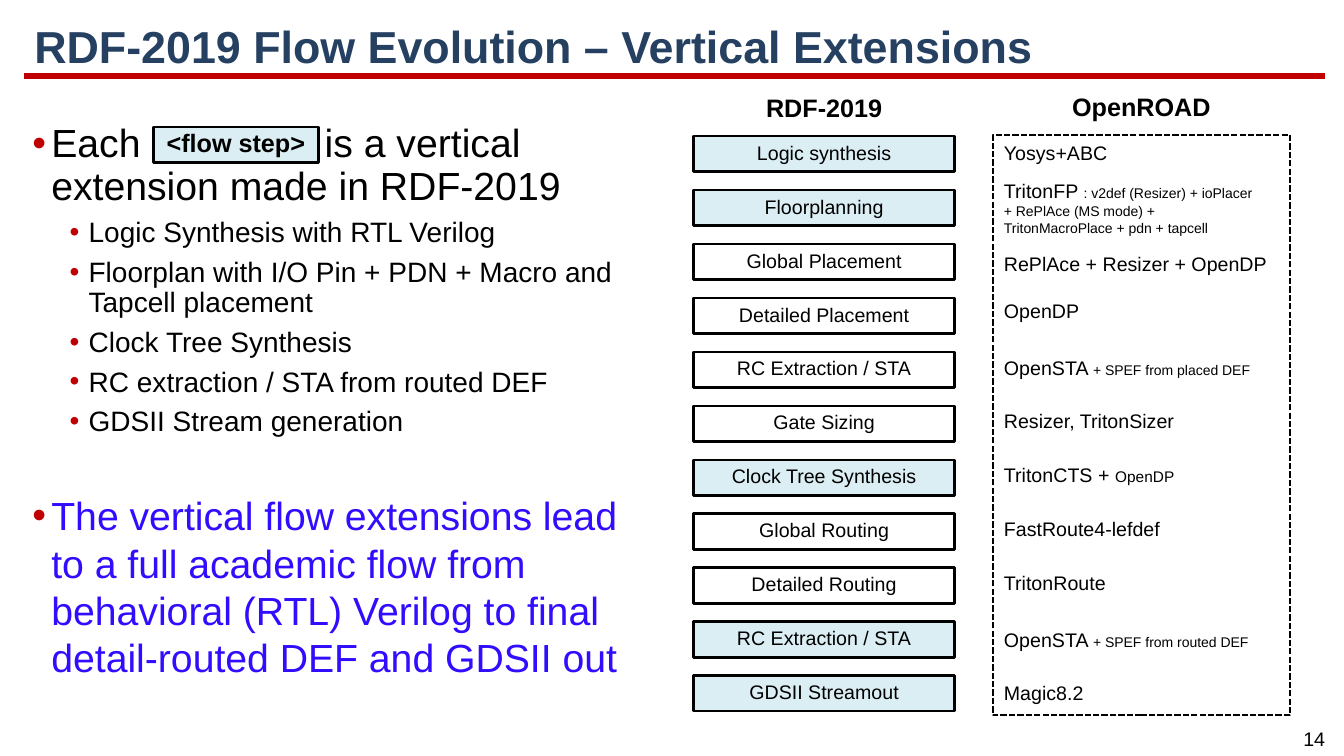
from lxml import etree
from pptx import Presentation
from pptx.dml.color import RGBColor
from pptx.enum.dml import MSO_LINE
from pptx.enum.shapes import MSO_CONNECTOR, MSO_SHAPE
from pptx.enum.text import MSO_ANCHOR, MSO_AUTO_SIZE, PP_ALIGN
from pptx.oxml.ns import qn
from pptx.util import Cm, Pt

RECTANGLE = MSO_SHAPE.RECTANGLE
STRAIGHT = MSO_CONNECTOR.STRAIGHT
DASHED = MSO_LINE.SQUARE_DOT
MIDDLE, TOP = MSO_ANCHOR.MIDDLE, MSO_ANCHOR.TOP
LEFT, CENTER = PP_ALIGN.LEFT, PP_ALIGN.CENTER
NO_AUTOFIT = MSO_AUTO_SIZE.NONE

BLACK, WHITE, RED = "000000", "FFFFFF", "C00000"
NAVY, VIOLET, PALE_BLUE = "254061", "300DFF", "DBEEF4"
ROW_PITCH, STEP_HEIGHT, TOOL_HEIGHT = 1.36, 0.89, 0.86

# step, added in RDF-2019, tool, tool detail, detail size, tool label shift in cm
FLOW = [
    ("Logic synthesis", True, "Yosys+ABC", "", 10, 0),
    ("Floorplanning", True, "TritonFP ",
     ": v2def (Resizer) + ioPlacer + RePlAce (MS mode) + "
     "TritonMacroPlace + pdn + tapcell", 10, -0.4),
    ("Global Placement", False, "RePlAce + Resizer + OpenDP", "", 10, 0.07),
    ("Detailed Placement", False, "OpenDP", "", 10, -0.09),
    ("RC Extraction / STA", False, "OpenSTA ", "+ SPEF from placed DEF", 10, -0.02),
    ("Gate Sizing", False, "Resizer, TritonSizer", "", 10, -0.04),
    ("Clock Tree Synthesis", True, "TritonCTS + ", "OpenDP", 11, -0.06),
    ("Global Routing", False, "FastRoute4-lefdef", "", 10, -0.04),
    ("Detailed Routing", False, "TritonRoute", "", 10, -0.04),
    ("RC Extraction / STA", True, "OpenSTA ", "+ SPEF from routed DEF", 10, 0.03),
    ("GDSII Streamout", True, "Magic8.2", "", 10, 0),
]

# text, level, size, colour, line spacing, space before in points
POINTS = [
    ("Each\tis a vertical extension made in RDF-2019", 0, 28, BLACK, 0.9, 0),
    ("Logic Synthesis with RTL Verilog", 1, 20, BLACK, 0.9, 6.8),
    ("Floorplan with I/O Pin + PDN + Macro and Tapcell placement", 1, 20, BLACK, 0.9, 6.8),
    ("Clock Tree Synthesis", 1, 20, BLACK, 0.9, 6.8),
    ("RC extraction / STA from routed DEF", 1, 20, BLACK, 0.9, 6.8),
    ("GDSII Stream generation", 1, 20, BLACK, 0.9, 6.8),
    ("The vertical flow extensions lead to a full academic flow from behavioral "
     "(RTL) Verilog to final detail-routed DEF and GDSII out", 0, 28, VIOLET, 1.0, 38.5),
]


def color(value):
    return RGBColor.from_string(value)


def apply(target, formats):
    for name, value in formats.items():
        setattr(target, name, value)


def place(shape, box):
    apply(shape, dict(zip(("left", "top", "width", "height"), map(Cm, box))))


def add_run(paragraph, text, size, ink=BLACK, bold=False):
    run = paragraph.add_run()
    run.text = text
    apply(run.font, {"name": "Arial", "size": Pt(size), "bold": bold})
    run.font.color.rgb = color(ink)


def add_label(slide, box, runs, align=LEFT, bold=False, wrap=True):
    label = slide.shapes.add_textbox(*map(Cm, box))
    apply(label.text_frame, {"word_wrap": wrap, "vertical_anchor": TOP})
    paragraph = label.text_frame.paragraphs[0]
    paragraph.alignment = align
    for text, size in runs:
        add_run(paragraph, text, size, bold=bold)


def add_frame(slide, box, fill=None, line_width=2):
    frame = slide.shapes.add_shape(RECTANGLE, *map(Cm, box))
    frame.shadow.inherit = False
    if fill:
        frame.fill.solid()
        frame.fill.fore_color.rgb = color(fill)
    else:
        frame.fill.background()
    frame.line.color.rgb = color(BLACK)
    frame.line.width = Pt(line_width)
    return frame


def add_step(slide, box, text, fill, size=14, bold=False):
    step = add_frame(slide, box, fill)
    apply(step.text_frame, {"word_wrap": True, "vertical_anchor": MIDDLE})
    paragraph = step.text_frame.paragraphs[0]
    apply(paragraph, {"alignment": CENTER, "line_spacing": 0.9})
    add_run(paragraph, text, size, bold=bold)


def add_bullet(paragraph, indent, tab=None):
    properties = paragraph._p.get_or_add_pPr()
    properties.set("marL", str(Cm(indent)))
    properties.set("indent", str(-Cm(0.48)))
    bullet_color = etree.SubElement(properties, qn("a:buClr"))
    etree.SubElement(bullet_color, qn("a:srgbClr"), val=RED)
    etree.SubElement(properties, qn("a:buFont"), typeface="Arial")
    etree.SubElement(properties, qn("a:buChar"), char="•")
    if tab:
        tabs = etree.SubElement(properties, qn("a:tabLst"))
        etree.SubElement(tabs, qn("a:tab"), pos=str(Cm(tab)), algn="l")


def build_header(slide, box):
    left, top, width, height = box
    # Red rule behind the title
    rule_top = Cm(top + 1.5)
    rule = slide.shapes.add_connector(
        STRAIGHT, Cm(left), rule_top, Cm(left + width), rule_top)
    rule.line.color.rgb = color(RED)
    rule.line.width = Pt(4.5)
    etree.SubElement(rule._element.spPr, qn("a:effectLst"))
    # Title
    title = slide.shapes.title
    place(title, box)
    apply(title.text_frame, {"vertical_anchor": MIDDLE, "word_wrap": True,
                             "auto_size": NO_AUTOFIT})
    paragraph = title.text_frame.paragraphs[0]
    apply(paragraph, {"alignment": LEFT, "line_spacing": 0.9})
    add_run(paragraph, "RDF-2019 Flow Evolution – Vertical Extensions", 32, NAVY, True)


def build_points(slide, box):
    left, top, width, height = box
    body = slide.placeholders[1]
    place(body, box)
    frame = body.text_frame
    apply(frame, {"word_wrap": True, "auto_size": NO_AUTOFIT, "vertical_anchor": TOP})
    for index, (text, level, size, ink, spacing, before) in enumerate(POINTS):
        paragraph = frame.paragraphs[0] if index == 0 else frame.add_paragraph()
        add_bullet(paragraph, 1.42 if level else 0.48, 7.37 if "\t" in text else None)
        apply(paragraph, {"level": level, "alignment": LEFT, "line_spacing": spacing,
                          "space_before": Pt(before), "space_after": Pt(0)})
        add_run(paragraph, text, size, ink)
    # Sample step set in the gap of the first line
    add_step(slide, (left + 3.3, top + 0.2, 4.17, STEP_HEIGHT),
             "<flow step>", PALE_BLUE, 18, True)


def build_steps(slide, box):
    left, top, width, height = box
    add_label(slide, (left, top - 1.22, width, 1.02), [("RDF-2019", 18)], CENTER, True)
    for row, (step, added, *_) in enumerate(FLOW):
        add_step(slide, (left, top + row * ROW_PITCH, width, STEP_HEIGHT),
                 step, PALE_BLUE if added else WHITE)


def build_tools(slide, box):
    left, top, width, height = box
    add_label(slide, (left, top - 1.22, width, 1.02), [("OpenROAD", 18)], CENTER, True)
    outline = add_frame(slide, box, line_width=1.5)
    outline.line.dash_style = DASHED
    for row, (_, _, tool, detail, size, shift) in enumerate(FLOW):
        runs = [(tool, 14)] + ([(detail, size)] if detail else [])
        label_width = width - (0.56 if detail else 0.1)
        add_label(slide, (left + 0.03, top + 0.03 + row * ROW_PITCH + shift,
                          label_width, TOOL_HEIGHT), runs)


def build_page_number(slide, box):
    add_label(slide, box, [("14", 14)], CENTER, wrap=False)


def main():
    deck = Presentation()
    apply(deck, {"slide_width": Cm(33.87), "slide_height": Cm(19.05)})
    slide = deck.slides.add_slide(deck.slide_layouts[1])
    build_header(slide, (0.61, 0.41, 32.79, 1.65))
    build_points(slide, (0.56, 3, 15.75, 14.63))
    build_steps(slide, (17.48, 3.43, 6.58, 14.49))
    build_tools(slide, (25.02, 3.4, 7.49, 14.63))
    build_page_number(slide, (32.56, 18.19, 1.12, 0.86))
    deck.save("out.pptx")


if __name__ == "__main__":
    main()
